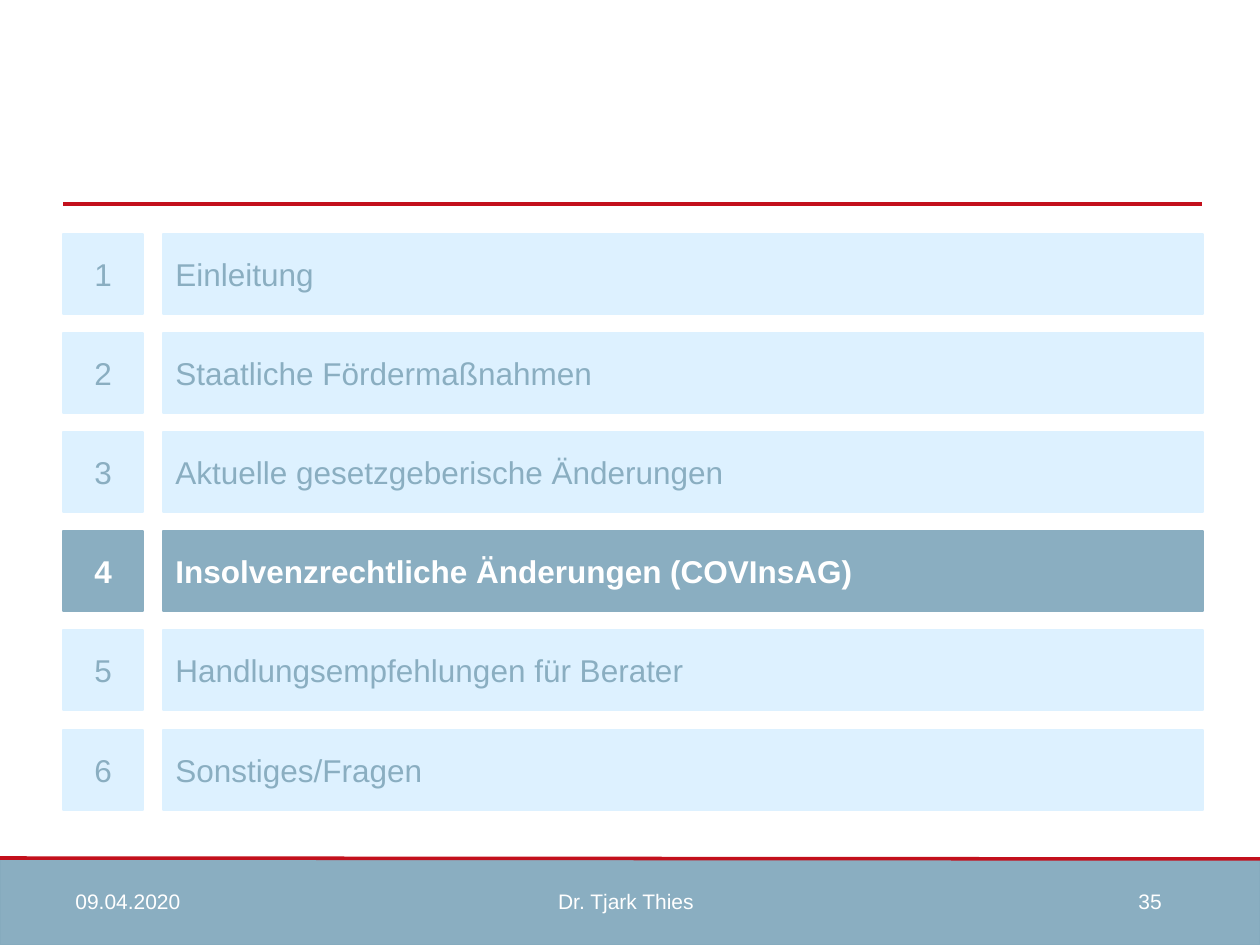
"""Build an agenda slide with the fourth of six topics highlighted."""
from lxml import etree
from pptx import Presentation
from pptx.dml.color import RGBColor
from pptx.enum.shapes import MSO_CONNECTOR, MSO_SHAPE
from pptx.enum.text import MSO_ANCHOR, PP_ALIGN
from pptx.oxml.ns import qn
from pptx.util import Pt

PX = 914400 / 126
RECT = MSO_SHAPE.RECTANGLE
STRAIGHT = MSO_CONNECTOR.STRAIGHT
MIDDLE = MSO_ANCHOR.MIDDLE
LEFT, CENTER = PP_ALIGN.LEFT, PP_ALIGN.CENTER
WHITE = RGBColor(0xFF, 0xFF, 0xFF)
BLUE = RGBColor(0x8A, 0xAE, 0xC1)
EDGE = RGBColor(0x86, 0xAB, 0xBE)
PALE = RGBColor(0xDD, 0xF1, 0xFF)
RED = RGBColor(0xC3, 0x10, 0x1C)
TOPICS = [
    "Einleitung",
    "Staatliche Fördermaßnahmen",
    "Aktuelle gesetzgeberische Änderungen",
    "Insolvenzrechtliche Änderungen (COVInsAG)",
    "Handlungsempfehlungen für Berater",
    "Sonstiges/Fragen",
]
ACTIVE = 4


def add_box(x, y, w, h, fill, edge):
    sp = s.shapes.add_shape(RECT, *(round(v * PX) for v in (x, y, w, h)))
    sp.shadow.inherit = False
    sp.fill.solid()
    sp.fill.fore_color.rgb = fill
    sp.line.color.rgb = edge
    sp.line.width = Pt(0.75)
    return sp


def set_text(sp, text, size, color, align, bold=False):
    tf = sp.text_frame
    tf.word_wrap = True
    tf.vertical_anchor = MIDDLE
    p = tf.paragraphs[0]
    p.text = text
    p.alignment = align
    p.font.name = "Arial"
    p.font.size = Pt(size)
    p.font.bold = bold
    p.font.color.rgb = color


prs = Presentation()
prs.slide_width = round(1260 * PX)
prs.slide_height = round(945 * PX)
s = prs.slides.add_slide(prs.slide_layouts[6])

add_box(0, 859, 1260, 86, BLUE, EDGE)
for x1, y1, x2, y2 in [(63, 204, 1202, 204), (0, 858, 1260, 859)]:
    line = s.shapes.add_connector(STRAIGHT, *(round(v * PX) for v in (x1, y1, x2, y2)))
    line.line.color.rgb = RED
    line.line.width = Pt(2)
    etree.SubElement(line._element.spPr, qn("a:effectLst"))

for i, topic in enumerate(TOPICS):
    y = 234 + 496 * i // 5
    active = i + 1 == ACTIVE
    fill, color = (BLUE, WHITE) if active else (PALE, BLUE)
    for x, w, text, align in [(63, 80, str(i + 1), CENTER), (163, 1040, topic, LEFT)]:
        sp = add_box(x, y, w, 80, fill, fill)
        set_text(sp, text, 18, color, align, active)

for x, w, text, align in [
    (63, 160, "09.04.2020", LEFT),
    (398, 456, "Dr. Tjark Thies", CENTER),
    (1126, 71, "35", LEFT),
]:
    sp = s.shapes.add_textbox(*(round(v * PX) for v in (x, 876, w, 50)))
    set_text(sp, text, 12, WHITE, align)

prs.save("out.pptx")
